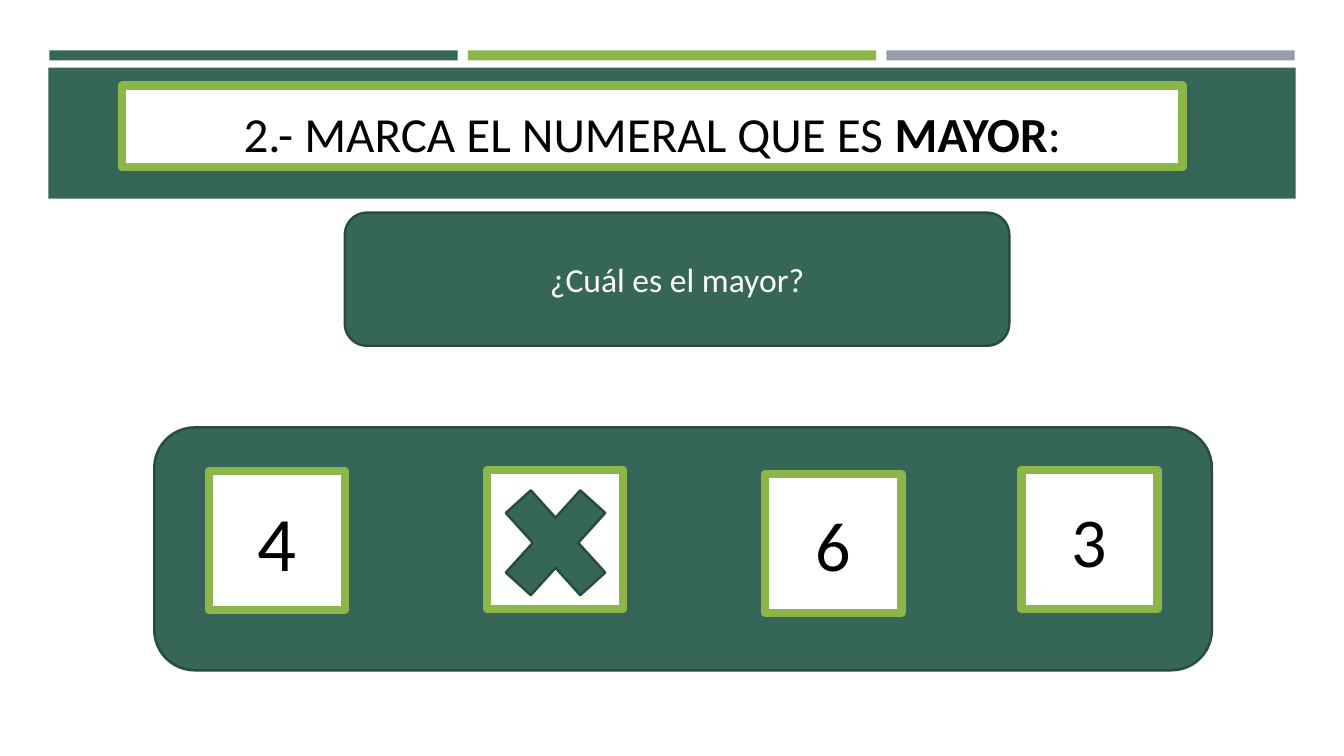
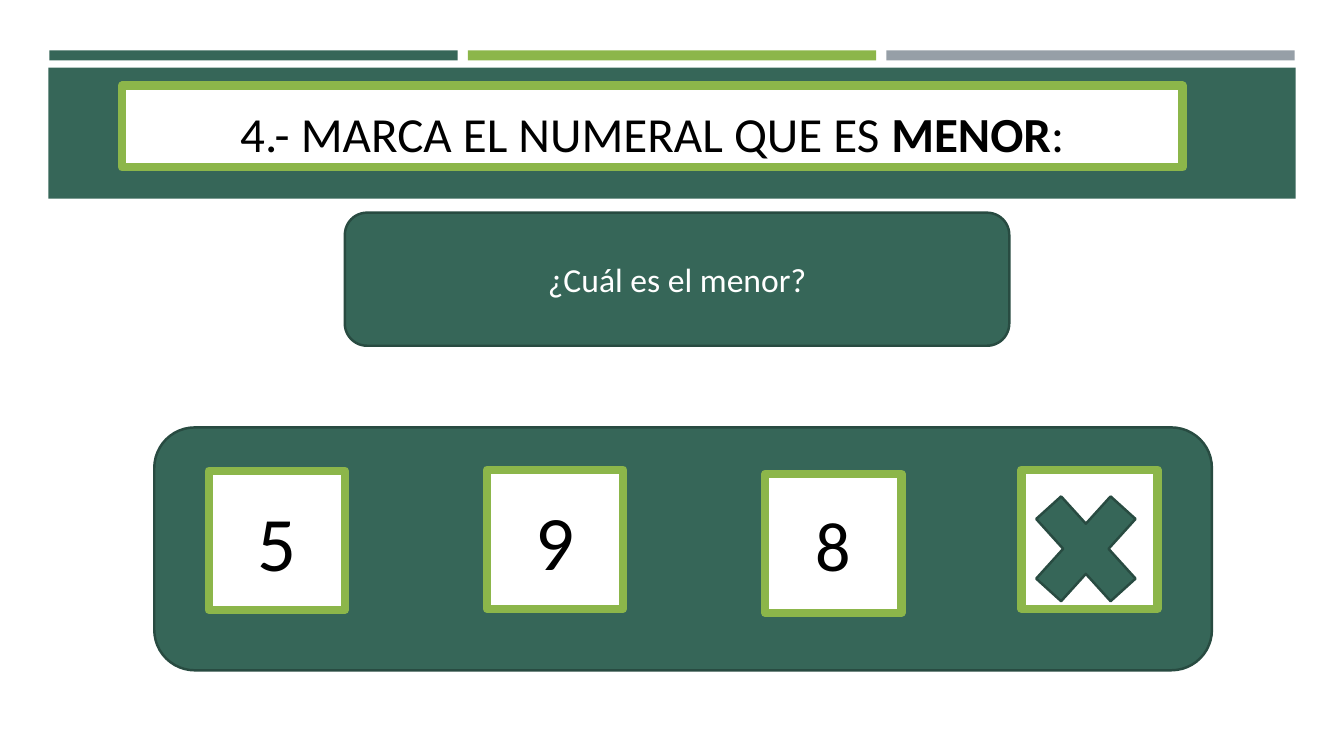
from pptx import Presentation
from pptx.dml.color import RGBColor
from pptx.enum.shapes import MSO_SHAPE
from pptx.enum.text import MSO_ANCHOR, MSO_AUTO_SIZE, PP_ALIGN
from pptx.util import Inches, Pt

RECT = MSO_SHAPE.RECTANGLE
ROUND = MSO_SHAPE.ROUNDED_RECTANGLE
CROSS = MSO_SHAPE.MATH_MULTIPLY
MIDDLE, BOTTOM = MSO_ANCHOR.MIDDLE, MSO_ANCHOR.BOTTOM
CENTER = PP_ALIGN.CENTER
NO_AUTOFIT = MSO_AUTO_SIZE.NONE

COLORS = {
    "green": "366658",
    "dark": "284B41",
    "lime": "8CB64A",
    "gray": "969FA7",
    "white": "FFFFFF",
    "black": "000000",
}
FONT = "Calibri"
CARDS = [(2.07, 4.67, 55), (4.83, 4.66, 55), (7.59, 4.7, 50), (10.13, 4.66, 50)]
SLIDES = [
    {"number": 2, "word": "mayor", "digits": ["4", None, "6", "3"], "cross": (4.8, 4.6)},
    {"number": 4, "word": "menor", "digits": ["5", "9", "8", None], "cross": (10.06, 4.66)},
]


def style(sp, fill, line=None, width=1.75):
    sp.fill.solid()
    sp.fill.fore_color.rgb = RGBColor.from_string(COLORS[fill])
    if line:
        sp.line.color.rgb = RGBColor.from_string(COLORS[line])
        sp.line.width = Pt(width)
    else:
        sp.line.fill.background()


def write(sp, text, size=24, color="black", anchor=MIDDLE, bold_word=None):
    tf = sp.text_frame
    tf.word_wrap = True
    tf.auto_size = NO_AUTOFIT
    tf.vertical_anchor = anchor
    p = tf.paragraphs[0]
    p.alignment = CENTER
    before, word, after = text.partition(bold_word) if bold_word else (text, "", "")
    for part, bold in [(before, False), (word, True), (after, False)]:
        if part:
            r = p.add_run()
            r.text = part
            r.font.name = FONT
            r.font.size = Pt(size)
            r.font.bold = bold
            r.font.color.rgb = RGBColor.from_string(COLORS[color])


prs = Presentation()
prs.slide_width = Inches(13.33)
prs.slide_height = Inches(7.5)
layout = prs.slide_layouts[5]
slides = [prs.slides.add_slide(layout) for _ in SLIDES]

bands = [(0.49 + i * 4.15, 0.5, 4.05, 0.1, color)
         for i, color in enumerate(["green", "lime", "gray"])]
bands.append((0.48, 0.67, 12.37, 1.3, "green"))
for x, y, w, h, color in bands:
    sp = slides[0].shapes.add_shape(RECT, Inches(x), Inches(y), Inches(w), Inches(h))
    sp.shadow.inherit = False
    style(sp, color)
    layout.shapes.element.append(sp.element)

for s, data in zip(slides, SLIDES):
    title = s.shapes.title
    title.left, title.top = Inches(1.21), Inches(0.85)
    title.width, title.height = Inches(10.52), Inches(0.81)
    style(title, "white", "lime", 6)
    word = data["word"].upper()
    write(title, f"{data['number']}.- MARCA EL NUMERAL QUE ES {word}:",
          size=35, anchor=BOTTOM, bold_word=word)

    panel = s.shapes.add_shape(ROUND, Inches(1.53), Inches(4.24), Inches(10.49), Inches(2.41))
    panel.shadow.inherit = False
    style(panel, "green", "dark")

    for digit, (x, y, size) in zip(data["digits"], CARDS):
        card = s.shapes.add_shape(RECT, Inches(x), Inches(y), Inches(1.35), Inches(1.38))
        card.shadow.inherit = False
        style(card, "white", "lime", 6)
        if digit:
            write(card, digit, size=size)

    question = s.shapes.add_shape(ROUND, Inches(3.42), Inches(2.11), Inches(6.59), Inches(1.32))
    question.shadow.inherit = False
    style(question, "green", "dark")
    write(question, f"¿Cuál es el {data['word']}?", color="white")

    x, y = data["cross"]
    cross = s.shapes.add_shape(CROSS, Inches(x), Inches(y), Inches(1.42), Inches(1.57))
    cross.shadow.inherit = False
    style(cross, "green", "dark")

prs.save("out.pptx")
